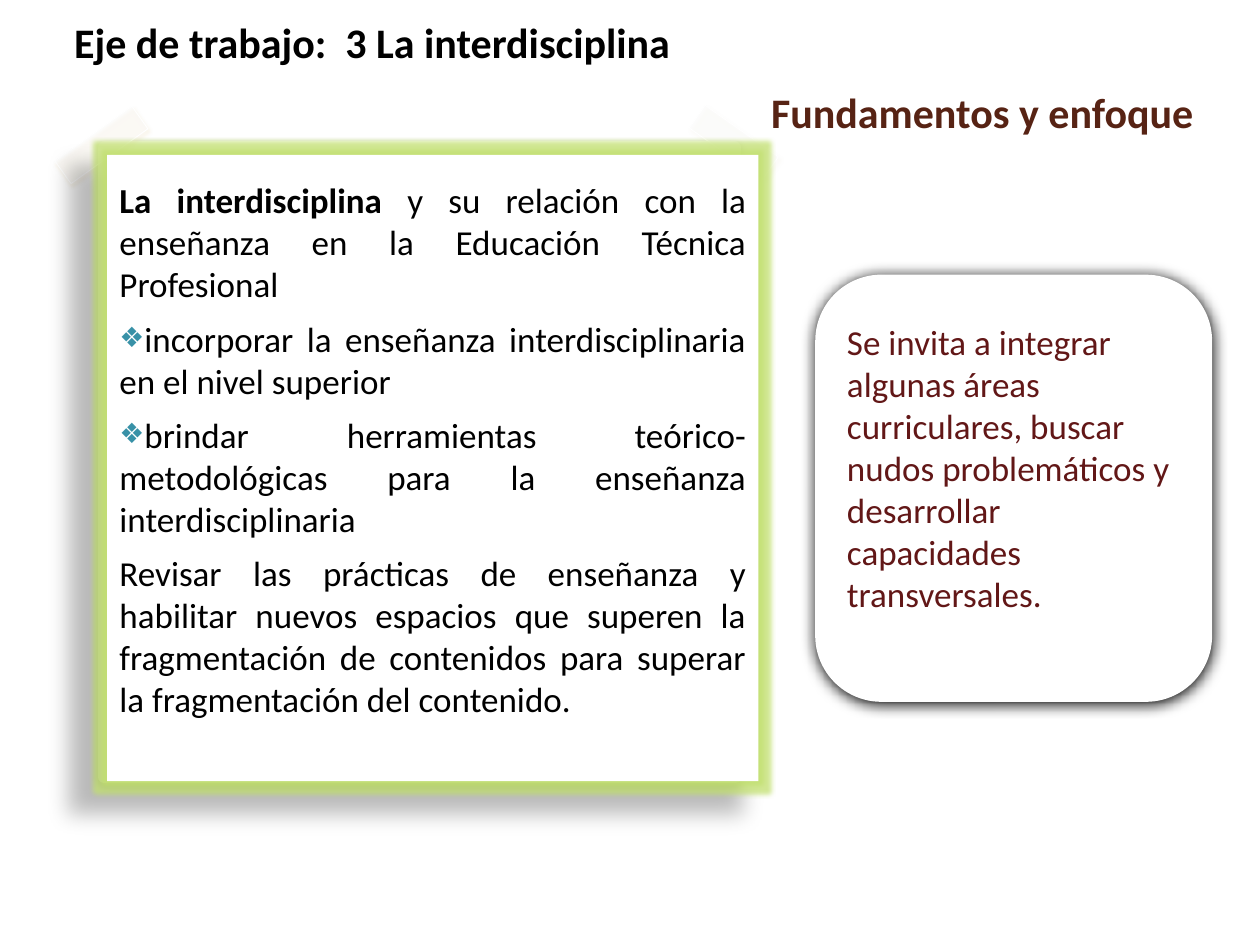
from dataclasses import dataclass
from typing import Optional

from lxml import etree
from pptx import Presentation
from pptx.dml.color import RGBColor
from pptx.enum.shapes import MSO_SHAPE
from pptx.enum.text import MSO_ANCHOR, PP_ALIGN
from pptx.oxml.ns import qn
from pptx.util import Inches, Pt

RECTANGLE = MSO_SHAPE.RECTANGLE
ROUNDED = MSO_SHAPE.ROUNDED_RECTANGLE
TAPE = MSO_SHAPE.FLOWCHART_PROCESS
TOP, MIDDLE = MSO_ANCHOR.TOP, MSO_ANCHOR.MIDDLE
LEFT, JUSTIFY = PP_ALIGN.LEFT, PP_ALIGN.JUSTIFY

FONT = "Calibri"
WHITE = RGBColor(0xFF, 0xFF, 0xFF)
BLACK = RGBColor(0x00, 0x00, 0x00)
TAPE_FILL = RGBColor(0xFB, 0xFB, 0xFB)
SAND = RGBColor(0xEB, 0xDA, 0xB2)
PALE_SAND = RGBColor(0xE7, 0xDE, 0xC9)
GLOW_GREEN = RGBColor(0xC2, 0xE0, 0x70)
TITLE_BROWN = RGBColor(0x57, 0x23, 0x14)
INVITATION_RED = RGBColor(0x62, 0x17, 0x17)
BULLET_TEAL = RGBColor(0x38, 0x91, 0xA7)


@dataclass(frozen=True)
class Shadow:
    color: RGBColor
    opacity: int
    blur: float
    distance: float
    angle: int


@dataclass(frozen=True)
class Panel:
    kind: int
    left: float
    top: float
    width: float
    height: float
    shadow: Shadow
    fill: RGBColor = WHITE
    opacity: int = 100
    line_width: float = 0
    rotation: float = 0
    flipped: bool = False
    glow: Optional[RGBColor] = None


@dataclass(frozen=True)
class Item:
    text: str
    lead: str = ""
    bulleted: bool = False


NOTE = Panel(RECTANGLE, 0.83, 1.17, 5, 5, Shadow(BLACK, 35, 4.4, 1.5, 90), line_width=7)
TAPES = [
    Panel(TAPE, 0.43, 1.04, 0.75, 0.22, Shadow(SAND, 40, 2, 2, 55),
          TAPE_FILL, 45, 0.5, 324.5),
    Panel(TAPE, 5.47, 1.02, 0.71, 0.22, Shadow(PALE_SAND, 20, 2, 2, 55),
          TAPE_FILL, 45, 0.5, 35.1, True),
]
CONTENT = Panel(RECTANGLE, 0.85, 1.23, 5.17, 4.97,
                Shadow(BLACK, 28, 11.8, 19.7, 141), glow=GLOW_GREEN)
INVITATION = Panel(ROUNDED, 6.47, 2.18, 3.15, 3.39, Shadow(BLACK, 100, 8.5, 1, 90))

ITEMS = [
    Item("y su relación con la enseñanza en la Educación Técnica Profesional",
         lead="La interdisciplina "),
    Item("incorporar la enseñanza interdisciplinaria en el nivel superior", bulleted=True),
    Item("brindar herramientas teórico- metodológicas para la enseñanza "
         "interdisciplinaria", bulleted=True),
    Item("Revisar las prácticas de enseñanza y habilitar nuevos espacios que superen "
         "la fragmentación de contenidos para superar la fragmentación del contenido."),
]


def add_child(parent, tag: str, **attributes):
    values = {name: str(value) for name, value in attributes.items()}
    return etree.SubElement(parent, qn(tag), values)


def add_color(parent, color: RGBColor, opacity: int) -> None:
    element = add_child(parent, "a:srgbClr", val=color)
    add_child(element, "a:alpha", val=opacity * 1000)


def add_effects(shape, panel: Panel) -> None:
    shape.shadow.inherit = False
    effects = shape._element.spPr.find(qn("a:effectLst"))
    if panel.glow is not None:
        add_color(add_child(effects, "a:glow", rad=Pt(5)), panel.glow, 75)
    shadow = panel.shadow
    element = add_child(effects, "a:outerShdw", blurRad=Pt(shadow.blur),
                        dist=Pt(shadow.distance), dir=shadow.angle * 60000,
                        algn="ctr", rotWithShape=0)
    add_color(element, shadow.color, shadow.opacity)


def add_panel(slide, panel: Panel):
    shape = slide.shapes.add_shape(panel.kind, Inches(panel.left), Inches(panel.top),
                                   Inches(panel.width), Inches(panel.height))
    shape.fill.solid()
    shape.fill.fore_color.rgb = panel.fill
    if panel.opacity < 100:
        color = shape._element.spPr.find(qn("a:solidFill"))[0]
        add_child(color, "a:alpha", val=panel.opacity * 1000)
    if panel.line_width:
        shape.line.color.rgb = WHITE
        shape.line.width = Pt(panel.line_width)
    else:
        shape.line.fill.background()
    shape.rotation = panel.rotation
    if panel.flipped:
        shape._element.spPr.find(qn("a:xfrm")).set("flipH", "1")
    add_effects(shape, panel)
    return shape


def add_run(paragraph, text: str, size: int, color: RGBColor, bold: bool = False) -> None:
    run = paragraph.add_run()
    run.text = text
    run.font.name = FONT
    run.font.size = Pt(size)
    run.font.bold = bold
    run.font.color.rgb = color


def add_bullet(paragraph) -> None:
    properties = paragraph._p.get_or_add_pPr()
    add_child(add_child(properties, "a:buClr"), "a:srgbClr", val=BULLET_TEAL)
    add_child(properties, "a:buSzPct", val=80000)
    add_child(properties, "a:buFont", typeface=FONT)
    add_child(properties, "a:buChar", char="❖")


def fill_content(text_frame) -> None:
    text_frame.word_wrap = True
    text_frame.vertical_anchor = TOP
    text_frame.margin_top = Inches(0.19)
    for index, item in enumerate(ITEMS):
        paragraph = text_frame.add_paragraph() if index else text_frame.paragraphs[0]
        paragraph.alignment = JUSTIFY
        paragraph.space_before = Pt(7 if index else 0)
        if item.bulleted:
            add_bullet(paragraph)
        if item.lead:
            add_run(paragraph, item.lead, 20, BLACK, True)
        add_run(paragraph, item.text, 20, BLACK)


def fill_invitation(text_frame) -> None:
    text_frame.word_wrap = True
    text_frame.vertical_anchor = MIDDLE
    text_frame.margin_bottom = Inches(0.38)
    paragraph = text_frame.paragraphs[0]
    paragraph.alignment = LEFT
    add_run(paragraph, "Se invita a integrar algunas áreas  curriculares, buscar nudos "
            "problemáticos y desarrollar capacidades transversales.", 20, INVITATION_RED)


def format_title(title) -> None:
    title.left, title.top = Inches(6.02), Inches(0.64)
    title.width, title.height = Inches(3.98), Inches(0.83)
    title.text_frame.word_wrap = True
    title.text_frame.vertical_anchor = TOP
    paragraph = title.text_frame.paragraphs[0]
    paragraph.alignment = LEFT
    add_run(paragraph, "Fundamentos y enfoque", 24, TITLE_BROWN, True)


def add_axis_label(slide) -> None:
    box = slide.shapes.add_textbox(Inches(0.49), Inches(0.08), Inches(5.69), Inches(0.5))
    box.text_frame.word_wrap = False
    add_run(box.text_frame.paragraphs[0], "Eje de trabajo:  3 La interdisciplina",
            24, BLACK, True)


def main() -> None:
    presentation = Presentation()
    presentation.slide_width, presentation.slide_height = Inches(10), Inches(7.5)
    slide = presentation.slides.add_slide(presentation.slide_layouts[5])
    format_title(slide.shapes.title)
    for panel in [NOTE, *TAPES]:
        add_panel(slide, panel)
    fill_content(add_panel(slide, CONTENT).text_frame)
    add_axis_label(slide)
    fill_invitation(add_panel(slide, INVITATION).text_frame)
    presentation.save("out.pptx")


if __name__ == "__main__":
    main()
